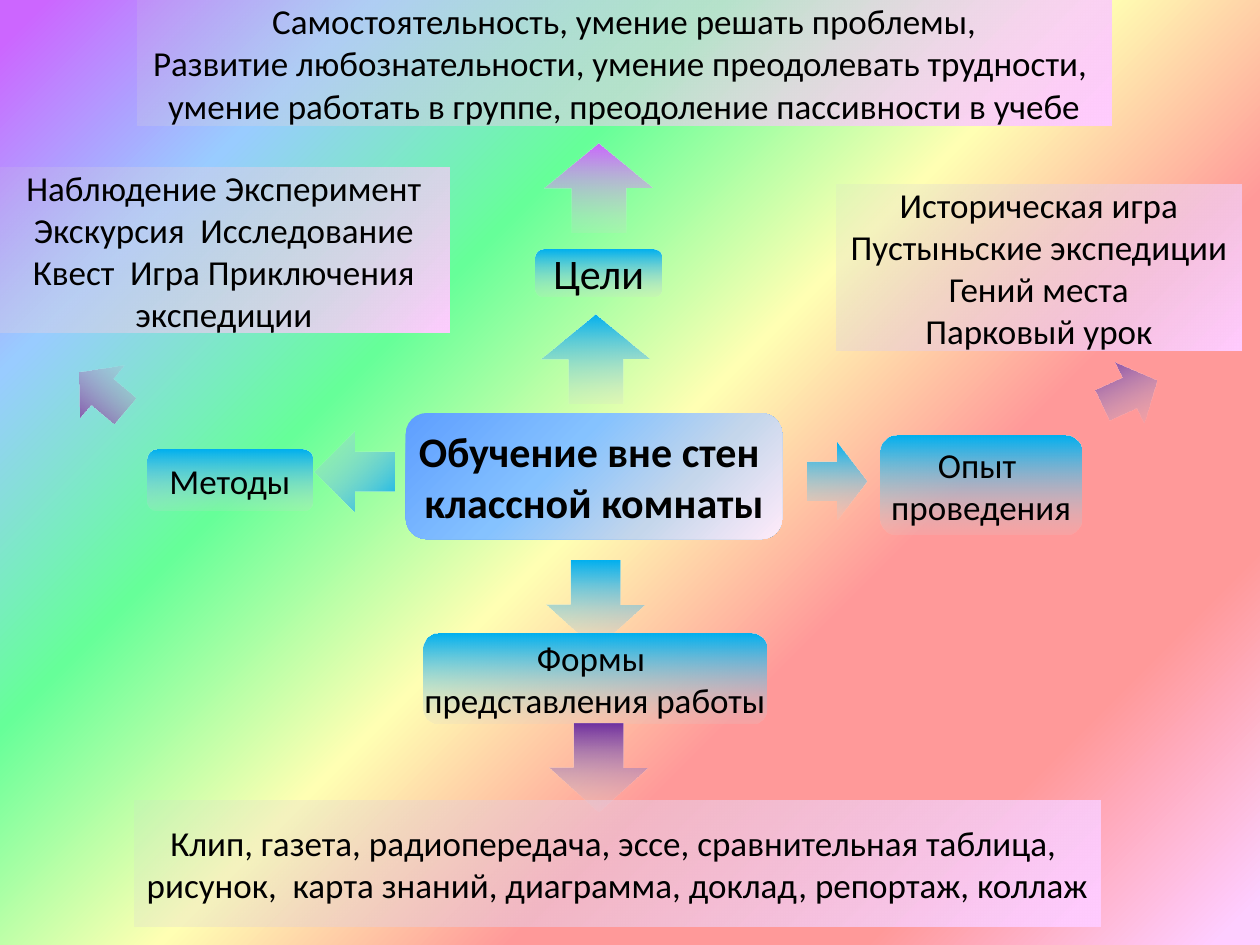
from lxml.etree import SubElement
from pptx import Presentation
from pptx.dml.color import RGBColor
from pptx.enum.shapes import MSO_SHAPE
from pptx.enum.text import MSO_ANCHOR, PP_ALIGN
from pptx.oxml.ns import qn
from pptx.util import Cm, Pt

RAINBOW = [(2, "CC66FF"), (17, "99CCFF"), (33, "66FF99"), (50, "FFFFB3"),
           (66, "FF9999"), (82, "FF9999"), (98, "FFCCFF")]
SKY = [(0, "5E9EFF"), (40, "85C2FF"), (70, "C4D6EB"), (100, "FFEBFA")]
BLUE, PLUM, LILAC, PINK = "00B0F0", "7030A0", "CC66FF", "FFCCFF"
MIST, CLEAR = "D4D4D6", 15  # end of every fading fill, opacity in percent
DOWN, SLANT, CORNER = 90, 45, None  # gradient angle, or spread from the corner

# shape, (left, top, width, height) in cm, turn, first colour, direction
ARROWS = [
    (MSO_SHAPE.RIGHT_ARROW, (16.28, 8.92, 1.19, 1.55), 0, BLUE, DOWN),
    (MSO_SHAPE.DOWN_ARROW, (11.02, 11.3, 1.98, 1.78), 0, BLUE, DOWN),
    (MSO_SHAPE.LEFT_ARROW, (6.35, 8.71, 1.6, 1.6), 0, BLUE, CORNER),
    (MSO_SHAPE.UP_ARROW, (10.92, 6.35, 2.18, 1.78), 0, BLUE, DOWN),
    (MSO_SHAPE.UP_ARROW, (10.97, 2.9, 2.18, 1.78), 0, LILAC, DOWN),
    (MSO_SHAPE.DOWN_ARROW, (11.07, 14.58, 1.98, 1.78), 0, PLUM, DOWN),
    (MSO_SHAPE.RIGHT_ARROW, (22.17, 7.24, 1.19, 1.35), 335, PLUM, DOWN),
    (MSO_SHAPE.RIGHT_ARROW, (1.47, 7.21, 1.19, 1.35), 220.2, PLUM, DOWN),
]
CORE = ("Обучение вне стен \nклассной комнаты", (8.18, 8.33, 7.59, 2.54))
# text, place in cm, text size
TOPICS = [
    ("Цели", (10.8, 5.03, 2.54, 0.94), 24),
    ("Опыт \nпроведения", (17.75, 8.79, 4.06, 1.98), 20),
    ("Методы", (2.97, 9.07, 3.33, 1.22), 20),
    ("Формы \nпредставления работы", (8.53, 12.78, 6.93, 1.8), 20),
]
DETAILS = [
    ("Историческая игра\nПустыньские экспедиции\nГений места\nПарковый урок",
     (16.87, 3.73, 8.15, 3.33)),
    ("Наблюдение Эксперимент\nЭкскурсия  Исследование\n"
     "Квест  Игра Приключения\nэкспедиции", (-0.03, 3.38, 9.09, 3.33)),
    ("Самостоятельность, умение решать проблемы,\n"
     "Развитие любознательности, умение преодолевать трудности, \n"
     "умение работать в группе, преодоление пассивности в учебе",
     (2.77, 0, 19.63, 2.54)),
    ("Клип, газета, радиопередача, эссе, сравнительная таблица, \n"
     "рисунок,  карта знаний, диаграмма, доклад, репортаж, коллаж",
     (2.72, 16.13, 19.46, 2.54)),
]


def fade(color):
    return [(0, color), (100, MIST, CLEAR)]


def blend(fill, parent, stops, angle):
    """Give a shape or background a gradient of (percent, colour[, opacity])."""
    fill.solid()
    solid = parent.find(qn("a:solidFill"))
    grad = SubElement(parent, qn("a:gradFill"), rotWithShape="1")
    parent.replace(solid, grad)
    items = SubElement(grad, qn("a:gsLst"))
    for pos, color, *alpha in stops:
        stop = SubElement(items, qn("a:gs"), pos=str(pos * 1000))
        tint = SubElement(stop, qn("a:srgbClr"), val=color)
        for part in alpha:
            SubElement(tint, qn("a:alpha"), val=str(part * 1000))
    if angle is CORNER:
        way = SubElement(grad, qn("a:path"), {"path": "circle"})
        SubElement(way, qn("a:fillToRect"), l="100000", t="100000")
    else:
        SubElement(grad, qn("a:lin"), ang=str(angle * 60000), scaled="0")


def add_shape(slide, kind, place, stops, angle):
    shape = slide.shapes.add_shape(kind, *map(Cm, place))
    shape.shadow.inherit = False
    shape.line.fill.background()
    blend(shape.fill, shape.element.spPr, stops, angle)
    return shape


def write(shape, text, size, bold=False):
    frame = shape.text_frame
    frame.text = text
    frame.word_wrap = False
    frame.vertical_anchor = MSO_ANCHOR.MIDDLE
    for para in frame.paragraphs:
        para.alignment = PP_ALIGN.CENTER
        for run in para.runs:
            font = run.font
            font.name, font.size, font.bold = "Calibri", Pt(size), bold
            font.color.rgb = RGBColor.from_string("000000")


def main():
    deck = Presentation()
    deck.slide_width, deck.slide_height = Cm(25.4), Cm(19.05)
    slide = deck.slides.add_slide(deck.slide_layouts[6])
    fill = slide.background.fill
    blend(fill, slide.element.cSld.find(".//" + qn("p:bgPr")), RAINBOW, SLANT)

    for kind, place, turn, color, angle in ARROWS:
        add_shape(slide, kind, place, fade(color), angle).rotation = turn

    text, place = CORE
    core = add_shape(slide, MSO_SHAPE.ROUNDED_RECTANGLE, place, SKY, SLANT)
    write(core, text, 24, bold=True)
    for text, place, size in TOPICS:
        topic = add_shape(slide, MSO_SHAPE.ROUNDED_RECTANGLE, place, fade(BLUE), DOWN)
        write(topic, text, size)
    for text, place in DETAILS:
        detail = add_shape(slide, MSO_SHAPE.RECTANGLE, place, fade(PINK), CORNER)
        write(detail, text, 20)

    deck.save("out.pptx")


if __name__ == "__main__":
    main()
